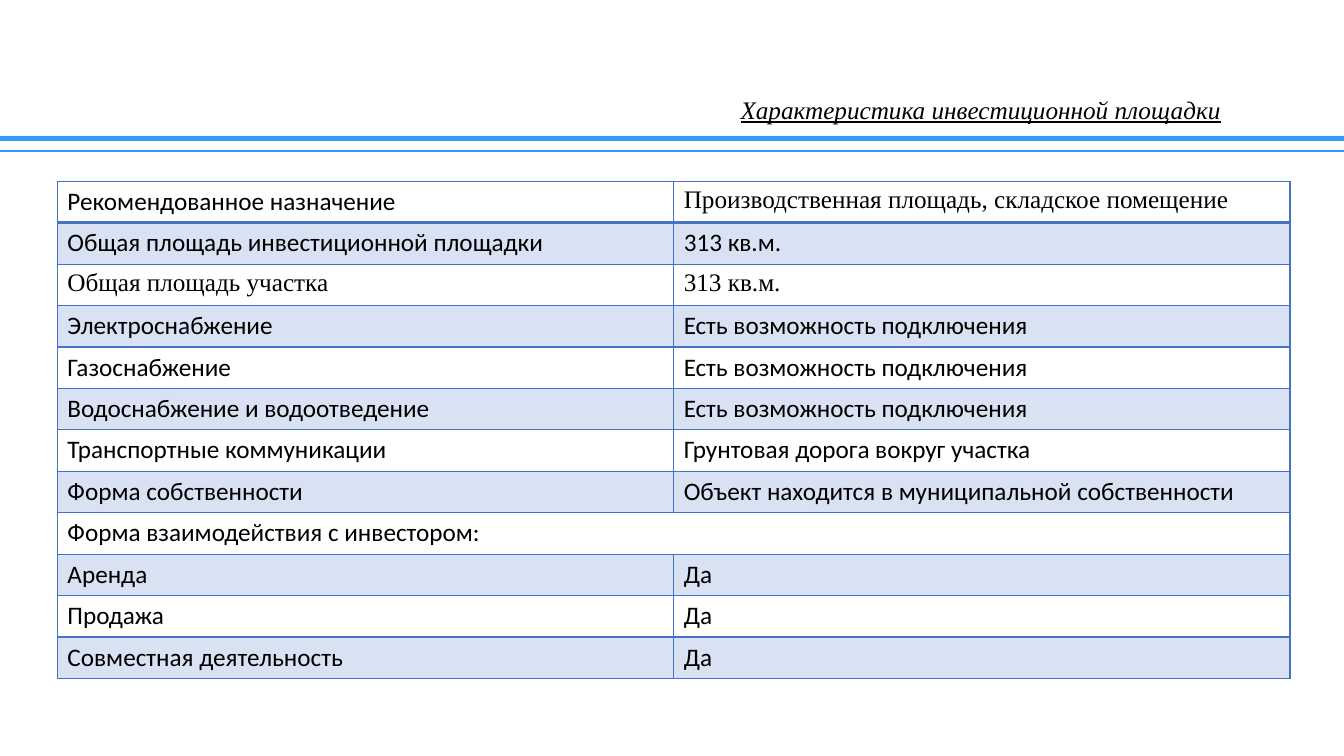
from dataclasses import dataclass

from lxml import etree
from pptx import Presentation
from pptx.dml.color import RGBColor
from pptx.enum import shapes, text
from pptx.oxml.ns import qn
from pptx.util import Pt


@dataclass(frozen=True)
class Theme:
    rule: str = "3399FF"
    grid: str = "4472C4"
    ink: str = "000000"
    band_opacity: int = 20
    size: int = 18
    sans: str = "Calibri"
    serif: str = "Times New Roman"


class SitePage:
    """Holds the theme and the current slide."""

    def __init__(self, deck, theme):
        self.theme = theme
        self.page = deck.slides.add_slide(deck.slide_layouts[5])

    def add_span(self, para, words, font):
        span = para.add_run()
        span.text = words
        span.font.name = font
        span.font.size = Pt(self.theme.size)
        span.font.color.rgb = RGBColor.from_string(self.theme.ink)
        return span

    def title(self, words, left, top, width, height):
        box = self.page.shapes.title
        box.left, box.top, box.width, box.height = map(Pt, (left, top, width, height))
        frame = box.text_frame
        frame.word_wrap = True
        frame.auto_size = text.MSO_AUTO_SIZE.NONE
        frame.vertical_anchor = text.MSO_ANCHOR.MIDDLE
        para = frame.paragraphs[0]
        para.alignment = text.PP_ALIGN.CENTER
        para.line_spacing = 0.9
        span = self.add_span(para, words, self.theme.serif)
        span.font.italic = True
        span.font.underline = True

    def rule(self, top, width, weight):
        line = self.page.shapes.add_connector(
            shapes.MSO_CONNECTOR.STRAIGHT, Pt(0), Pt(top), Pt(width), Pt(top))
        line.line.color.rgb = RGBColor.from_string(self.theme.rule)
        line.line.width = Pt(weight)
        etree.SubElement(line._element.spPr, qn("a:effectLst"))

    def border(self, cell, side, weight):
        properties = cell._tc.get_or_add_tcPr()
        line = etree.SubElement(properties, qn(f"a:ln{side}"), w=str(Pt(weight)))
        fill = etree.SubElement(line, qn("a:solidFill"))
        etree.SubElement(fill, qn("a:srgbClr"), val=self.theme.grid)

    def band(self, cell):
        cell.fill.solid()
        cell.fill.fore_color.rgb = RGBColor.from_string(self.theme.grid)
        color = cell._tc.tcPr.find(qn("a:solidFill")).find(qn("a:srgbClr"))
        etree.SubElement(color, qn("a:alpha"), val=str(self.theme.band_opacity * 1000))

    def table(self, rows, serif_cells, left, top, width, row_height):
        grid = self.page.shapes.add_table(
            len(rows), 2, Pt(left), Pt(top), Pt(width), Pt(row_height * len(rows))).table
        grid.first_row = grid.horz_banding = False
        for column in grid.columns:
            column.width = Pt(width / 2)
        for r, values in enumerate(rows):
            grid.rows[r].height = Pt(row_height)
            if len(values) == 1:
                grid.cell(r, 0).merge(grid.cell(r, 1))
            for c in range(2):
                cell = grid.cell(r, c)
                for side in "LRTB":
                    under_first = (r, side) in ((0, "B"), (1, "T"))
                    self.border(cell, side, 2 if under_first else 1)
                if r % 2:
                    self.band(cell)
                else:
                    cell.fill.background()
                if c < len(values):
                    font = self.theme.serif if (r, c) in serif_cells else self.theme.sans
                    self.add_span(cell.text_frame.paragraphs[0], values[c], font)


CONNECTION = "Есть возможность подключения"
SITE_FACTS = [
    ("Рекомендованное назначение", "Производственная площадь, складское помещение"),
    ("Общая площадь инвестиционной площадки", "313 кв.м."),
    ("Общая площадь участка", "313 кв.м."),
    ("Электроснабжение", CONNECTION),
    ("Газоснабжение", CONNECTION),
    ("Водоснабжение и водоотведение", CONNECTION),
    ("Транспортные коммуникации", "Грунтовая дорога вокруг участка"),
    ("Форма собственности", "Объект находится в муниципальной собственности"),
    ("Форма взаимодействия с инвестором:",),
    ("Аренда", "Да"),
    ("Продажа", "Да"),
    ("Совместная деятельность", "Да"),
]
SERIF_CELLS = {(0, 1), (2, 0), (2, 1)}


def main():
    deck = Presentation()
    deck.slide_width, deck.slide_height = Pt(960), Pt(540)
    site = SitePage(deck, Theme())

    # Heading with a double rule
    site.rule(99, 960, 3.5)
    site.rule(108, 960, 1.5)
    site.title("Характеристика инвестиционной площадки", 480, 69.5, 441, 19.5)

    # Site characteristics
    site.table(SITE_FACTS, SERIF_CELLS, 41, 129.5, 880.5, 29.6)

    deck.save("out.pptx")


if __name__ == "__main__":
    main()
